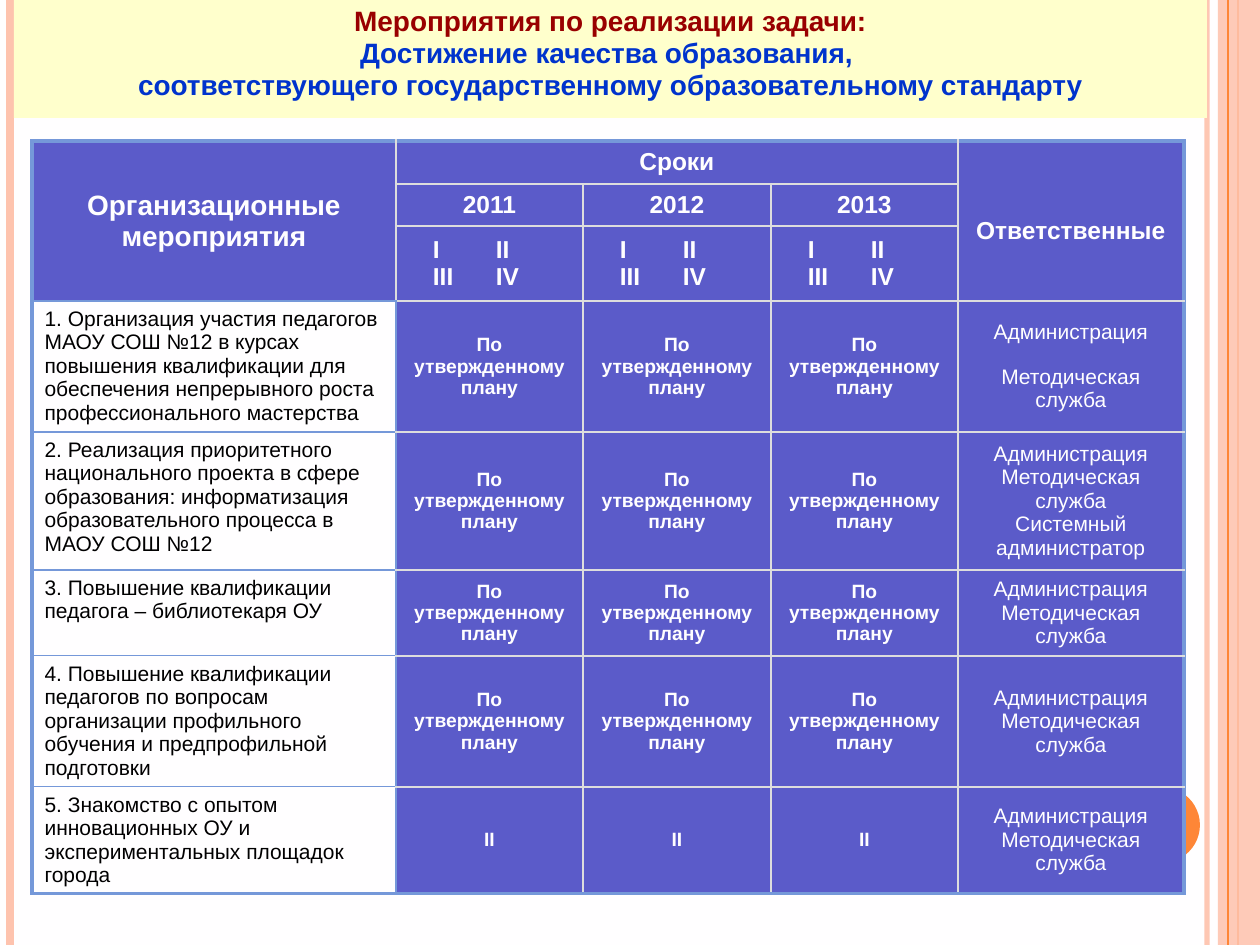
from lxml.etree import SubElement
from pptx import Presentation
from pptx.dml.color import RGBColor
from pptx.enum.shapes import MSO_CONNECTOR, MSO_SHAPE
from pptx.enum.text import MSO_ANCHOR, PP_ALIGN
from pptx.oxml.ns import qn
from pptx.util import Emu, Pt

FONT = "Arial"
WHITE, BLACK, INDIGO = "FFFEFF", "000000", "5B5BC9"
PEACH, ORANGE = "FEC3AE", "FE8637"
OUTER, THIN, LIGHT = ("7598D9", 2.25), ("7598D9", 1), ("DDDDDD", 1.5)

TITLE = [
    ("Мероприятия по реализации задачи:", "990000"),
    ("Достижение качества образования, \vсоответствующего государственному "
     "образовательному стандарту", "0033CC"),
]
YEARS = ["2011", "2012", "2013"]
QUARTERS = "I\tII\tIII\tIV"
QUARTER_TABS = [27, 54, 82]
PLAN = "По утвержденному плану"
STAFF = "Администрация\vМетодическая служба"
# activity, timing for every year, people responsible
ACTIVITIES = [
    ("1. Организация участия педагогов МАОУ СОШ №12 в курсах повышения квалификации "
     "для обеспечения непрерывного роста профессионального мастерства",
     PLAN, "Администрация\nМетодическая служба"),
    ("2. Реализация приоритетного национального проекта в сфере образования: "
     "информатизация образовательного процесса в МАОУ СОШ №12",
     PLAN, STAFF + "\vСистемный администратор"),
    ("3. Повышение квалификации педагога – библиотекаря ОУ", PLAN, STAFF),
    ("4. Повышение квалификации педагогов по вопросам организации профильного "
     "обучения и предпрофильной подготовки", PLAN, STAFF),
    ("5. Знакомство с опытом инновационных ОУ и экспериментальных площадок города",
     "II", STAFF),
]
COLUMN_WIDTHS = [364, 187, 188, 187, 226]
ROW_HEIGHTS = [43, 42, 75, 131, 138, 86, 131, 106]
HEADER_ROWS = 3
# x, colour, points, opacity in percent
RULES = [(1207, PEACH, 3, 93), (10, PEACH, 4.5, 100), (1238, ORANGE, 1.5, 100)]
EDGE_RULE = (1228, ORANGE, 0.75, 100)


def px(value):
    return Emu(round(value * 914400 / 126))


def color(value):
    return RGBColor.from_string(value)


def set_opacity(fill_parent, percent):
    for hue in fill_parent.iter(qn("a:srgbClr")):
        SubElement(hue, qn("a:alpha"), val=str(percent * 1000))


def add_rule(page, x, hue, points, opacity):
    rule = page.shapes.add_connector(MSO_CONNECTOR.STRAIGHT, px(x), 0, px(x), px(945))
    rule.line.color.rgb = color(hue)
    rule.line.width = Pt(points)
    properties = rule._element.spPr
    if opacity < 100:
        set_opacity(properties, opacity)
    SubElement(properties, qn("a:effectLst"))


def add_plain_shape(page, preset, left, top, width, height, hue):
    shape = page.shapes.add_shape(preset, px(left), px(top), px(width), px(height))
    shape.shadow.inherit = False
    shape.fill.solid()
    shape.fill.fore_color.rgb = color(hue)
    shape.line.fill.background()
    return shape


def style(paragraph, size, hue, bold, align):
    paragraph.alignment = align
    for span in paragraph.runs:
        span.font.name = FONT
        span.font.size = Pt(size)
        span.font.bold = bold
        span.font.color.rgb = color(hue)


def vertical_border(row, line):
    if line in (0, len(COLUMN_WIDTHS)):
        return OUTER
    return THIN if line == 1 and row >= HEADER_ROWS else LIGHT


def horizontal_border(line, column):
    if line in (0, len(ROW_HEIGHTS)):
        return OUTER
    return THIN if column == 0 else LIGHT


def set_borders(cell, row, column):
    properties = cell._tc.get_or_add_tcPr()
    sides = {
        "a:lnL": vertical_border(row, column),
        "a:lnR": vertical_border(row, column + 1),
        "a:lnT": horizontal_border(row, column),
        "a:lnB": horizontal_border(row + 1, column),
    }
    for tag, (hue, points) in sides.items():
        line = SubElement(properties, qn(tag), w=str(Pt(points)))
        fill = SubElement(line, qn("a:solidFill"))
        SubElement(fill, qn("a:srgbClr"), val=hue)


def write(cell, text, size, bold=True, hue=WHITE, align=PP_ALIGN.CENTER):
    cell.text_frame.text = text
    for index, paragraph in enumerate(cell.text_frame.paragraphs):
        style(paragraph, size, hue, bold, align)
        if index:
            paragraph.space_before = Pt(12)


def write_quarters(cell):
    paragraph = cell.text_frame.paragraphs[0]
    tabs = SubElement(paragraph._p.get_or_add_pPr(), qn("a:tabLst"))
    for stop in QUARTER_TABS:
        SubElement(tabs, qn("a:tab"), pos=str(px(stop)), algn="l")
    write(cell, QUARTERS, 14, align=PP_ALIGN.LEFT)
    cell.margin_left = px(37)


def add_schedule(page):
    table = page.shapes.add_table(
        len(ROW_HEIGHTS), len(COLUMN_WIDTHS), px(32), px(141),
        px(sum(COLUMN_WIDTHS)), px(sum(ROW_HEIGHTS))).table
    table.first_row = table.horz_banding = False
    for column, width in zip(table.columns, COLUMN_WIDTHS):
        column.width = px(width)
    for row, height in zip(table.rows, ROW_HEIGHTS):
        row.height = px(height)

    for row in range(len(ROW_HEIGHTS)):
        for column in range(len(COLUMN_WIDTHS)):
            cell = table.cell(row, column)
            is_activity = column == 0 and row >= HEADER_ROWS
            set_borders(cell, row, column)
            cell.fill.solid()
            cell.fill.fore_color.rgb = color(WHITE if is_activity else INDIGO)
            cell.vertical_anchor = MSO_ANCHOR.TOP if is_activity else MSO_ANCHOR.MIDDLE

    last = len(COLUMN_WIDTHS) - 1
    table.cell(0, 0).merge(table.cell(HEADER_ROWS - 1, 0))
    table.cell(0, 1).merge(table.cell(0, last - 1))
    table.cell(0, last).merge(table.cell(HEADER_ROWS - 1, last))
    write(table.cell(0, 0), "Организационные мероприятия", 16)
    write(table.cell(0, 1), "Сроки", 14)
    write(table.cell(0, last), "Ответственные", 14)
    table.cell(0, last).margin_top = px(27)
    for column, year in enumerate(YEARS, 1):
        write(table.cell(1, column), year, 14)
        write_quarters(table.cell(2, column))

    for row, (activity, timing, people) in enumerate(ACTIVITIES, HEADER_ROWS):
        write(table.cell(row, 0), activity, 12, False, BLACK, PP_ALIGN.LEFT)
        for column in range(1, last):
            write(table.cell(row, column), timing, 11)
        write(table.cell(row, last), people, 12, False)


def add_title(page):
    box = add_plain_shape(page, MSO_SHAPE.RECTANGLE, 14, 0, 1193, 118, "FFFFCC")
    frame = box.text_frame
    frame.word_wrap = True
    frame.vertical_anchor = MSO_ANCHOR.TOP
    frame.text = "\n".join(text for text, hue in TITLE)
    for paragraph, (text, hue) in zip(frame.paragraphs, TITLE):
        paragraph.line_spacing = 0.95
        style(paragraph, 16, hue, True, PP_ALIGN.CENTER)


def main():
    deck = Presentation()
    deck.slide_width, deck.slide_height = px(1260), px(945)
    page = deck.slides.add_slide(deck.slide_layouts[6])
    page.background.fill.solid()
    page.background.fill.fore_color.rgb = color(WHITE)
    for rule in RULES:
        add_rule(page, *rule)
    band = add_plain_shape(page, MSO_SHAPE.RECTANGLE, 1218, 0, 42, 945, PEACH)
    set_opacity(band._element.spPr, 87)
    add_rule(page, *EDGE_RULE)
    add_plain_shape(page, MSO_SHAPE.OVAL, 1124, 787, 76, 76, ORANGE)
    add_schedule(page)
    add_title(page)
    deck.save("out.pptx")


if __name__ == "__main__":
    main()
